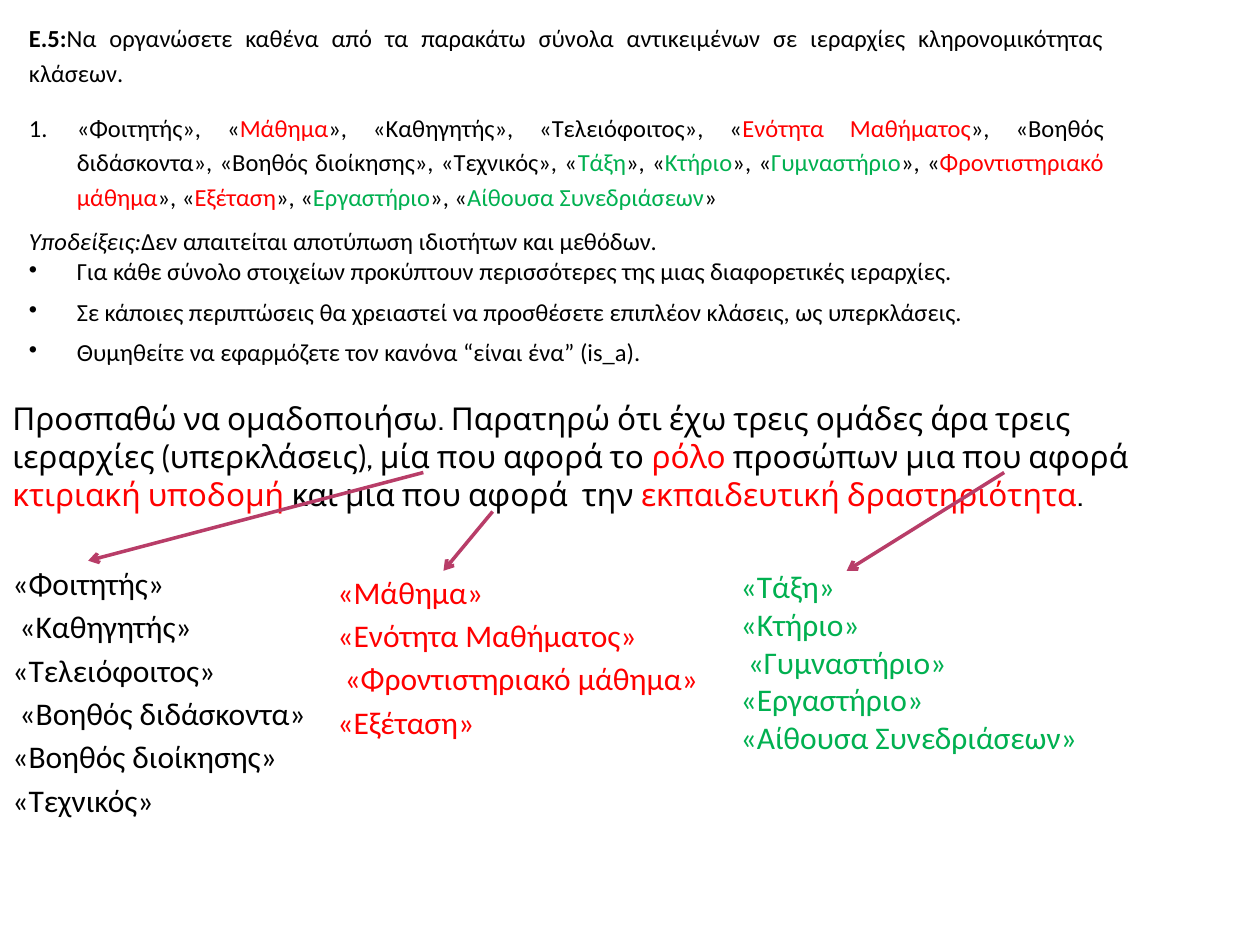
from dataclasses import dataclass
from typing import NamedTuple

from lxml import etree
from pptx import Presentation
from pptx.dml.color import RGBColor
from pptx.enum import shapes, text
from pptx.oxml import ns
from pptx.util import Inches, Pt

BLACK = RGBColor(0x00, 0x00, 0x00)
RED = RGBColor(0xFF, 0x00, 0x00)
GREEN = RGBColor(0x00, 0xB0, 0x50)
PLUM = RGBColor(0xB8, 0x3D, 0x68)
HANGING = 0.38
NUMBER = ("a:buAutoNum", {"type": "arabicPeriod"})
DOT = ("a:buChar", {"char": "•"})


class Span(NamedTuple):
    words: str
    color: RGBColor = BLACK
    bold: bool = False
    italic: bool = False


@dataclass
class Passage:
    spans: list[Span]
    size: int = 18
    font: str = "Calibri"
    align: text.PP_ALIGN = text.PP_ALIGN.LEFT
    line_spacing: float | None = None
    before: int = 0
    after: int = 0
    hanging: bool = False
    bullet: tuple[str, dict[str, str]] | None = None


@dataclass
class Block:
    left: float
    top: float
    width: float
    height: float
    passages: list[Passage]


class Arrow(NamedTuple):
    start: tuple[float, float]
    end: tuple[float, float]


def exercise_passage(spans: list[Span], **layout) -> Passage:
    return Passage(spans, size=14, align=text.PP_ALIGN.JUSTIFY, **layout)


def hint(words: str) -> Passage:
    return exercise_passage([Span(words)], after=6, hanging=True, bullet=DOT)


def members(words: list[str], color: RGBColor, line_spacing: float | None = None) -> list[Passage]:
    """One line per class name; spaced lists have a hanging indent."""
    return [Passage([Span(word, color)], line_spacing=line_spacing, hanging=line_spacing is not None)
            for word in words]


EXERCISE = [
    exercise_passage([
        Span("Ε.5:", bold=True),
        Span("Να οργανώσετε καθένα από τα παρακάτω σύνολα αντικειμένων σε ιεραρχίες "
             "κληρονομικότητας κλάσεων."),
    ], line_spacing=1.15, after=6),
    exercise_passage([
        Span("«Φοιτητής», «"), Span("Μάθημα", RED),
        Span("», «Καθηγητής», «Τελειόφοιτος», «"), Span("Ενότητα Μαθήματος", RED),
        Span("», «Βοηθός διδάσκοντα», «Βοηθός διοίκησης», «Τεχνικός», «"),
        Span("Τάξη", GREEN), Span("», «"), Span("Κτήριο", GREEN), Span("», «"),
        Span("Γυμναστήριο", GREEN), Span("», «"), Span("Φροντιστηριακό μάθημα", RED),
        Span("», «"), Span("Εξέταση", RED), Span("», «"), Span("Εργαστήριο", GREEN),
        Span("», «"), Span("Αίθουσα Συνεδριάσεων", GREEN), Span("»"),
    ], line_spacing=1.15, before=6, after=6, hanging=True, bullet=NUMBER),
    exercise_passage([
        Span("Υποδείξεις:", italic=True),
        Span("Δεν απαιτείται αποτύπωση ιδιοτήτων και μεθόδων."),
    ], line_spacing=1.15),
    hint("Για κάθε σύνολο στοιχείων προκύπτουν περισσότερες της μιας διαφορετικές ιεραρχίες."),
    hint("Σε κάποιες περιπτώσεις θα χρειαστεί να προσθέσετε επιπλέον κλάσεις, ως υπερκλάσεις."),
    hint("Θυμηθείτε να εφαρμόζετε τον κανόνα “είναι ένα” (is_a)."),
]

GROUPING = [Passage([
    Span("Προσπαθώ να ομαδοποιήσω. Παρατηρώ ότι έχω τρεις ομάδες άρα τρεις ιεραρχίες "
         "(υπερκλάσεις), μία που αφορά το "),
    Span("ρόλο", RED), Span(" προσώπων μια που αφορά "),
    Span("κτιριακή υποδομή ", RED), Span("και μια που αφορά  την "),
    Span("εκπαιδευτική δραστηριότητα", RED), Span("."),
], font="Cabin")]

PEOPLE = members(["«Φοιτητής»", " «Καθηγητής»", "«Τελειόφοιτος»", " «Βοηθός διδάσκοντα»",
                  "«Βοηθός διοίκησης»", "«Τεχνικός»"], BLACK, 1.15)
TEACHING = members(["«Μάθημα»", "«Ενότητα Μαθήματος»", " «Φροντιστηριακό μάθημα»",
                    "«Εξέταση»"], RED, 1.15)
BUILDINGS = members(["«Τάξη»", "«Κτήριο»", " «Γυμναστήριο»", "«Εργαστήριο»",
                     "«Αίθουσα Συνεδριάσεων»"], GREEN)

BLOCKS = [
    Block(0, 3.12, 9.38, 1.01, GROUPING),
    Block(0, 4.38, 2.58, 2.17, PEOPLE),
    Block(2.58, 4.45, 3.13, 1.49, TEACHING),
    Block(5.78, 4.45, 3.05, 1.62, BUILDINGS),
]
ARROWS = [
    Arrow((3.36, 3.75), (0.7, 4.45)),
    Arrow((7.97, 3.75), (6.72, 4.53)),
    Arrow((3.91, 4.06), (3.52, 4.53)),
]


def write_passages(frame, passages: list[Passage]) -> None:
    for index, passage in enumerate(passages):
        paragraph = frame.add_paragraph() if index else frame.paragraphs[0]
        paragraph.alignment = passage.align
        paragraph.space_before = Pt(passage.before)
        paragraph.space_after = Pt(passage.after)
        if passage.line_spacing:
            paragraph.line_spacing = passage.line_spacing
        properties = paragraph._p.get_or_add_pPr()
        if passage.hanging:
            properties.set("marL", str(Inches(HANGING)))
            properties.set("indent", str(-Inches(HANGING)))
        if passage.bullet:
            tag, attributes = passage.bullet
            etree.SubElement(properties, ns.qn(tag), attributes)
        paragraph.font.size = Pt(passage.size)
        paragraph.font.name = passage.font
        for span in passage.spans:
            run = paragraph.add_run()
            run.text = span.words
            run.font.color.rgb = span.color
            run.font.bold = span.bold
            run.font.italic = span.italic


def add_exercise(slide) -> None:
    table = slide.shapes.add_table(1, 1, Inches(0.16), Inches(0.16),
                                   Inches(8.67), Inches(2.19)).table
    table.first_row = table.horz_banding = False
    cell = table.cell(0, 0)
    cell.fill.background()
    cell.vertical_anchor = text.MSO_ANCHOR.MIDDLE
    cell.margin_left = cell.margin_right = Inches(0.07)
    cell.margin_top = cell.margin_bottom = 0
    write_passages(cell.text_frame, EXERCISE)


def add_block(slide, block: Block) -> None:
    frame = slide.shapes.add_textbox(Inches(block.left), Inches(block.top),
                                     Inches(block.width), Inches(block.height)).text_frame
    frame.word_wrap = True
    frame.auto_size = text.MSO_AUTO_SIZE.SHAPE_TO_FIT_TEXT
    write_passages(frame, block.passages)


def add_arrow(slide, arrow: Arrow) -> None:
    connector = slide.shapes.add_connector(shapes.MSO_CONNECTOR.STRAIGHT,
                                           *map(Inches, arrow.start + arrow.end))
    connector.line.color.rgb = PLUM
    connector.line.width = Pt(2)
    etree.SubElement(connector.line._get_or_add_ln(), ns.qn("a:tailEnd"), {"type": "arrow"})
    etree.SubElement(connector._element.spPr, ns.qn("a:effectLst"))


def main() -> None:
    deck = Presentation()
    deck.slide_width, deck.slide_height = Inches(10), Inches(7.5)
    slide = deck.slides.add_slide(deck.slide_layouts[6])
    add_exercise(slide)
    for block in BLOCKS:
        add_block(slide, block)
    for arrow in ARROWS:
        add_arrow(slide, arrow)
    deck.save("out.pptx")


if __name__ == "__main__":
    main()
